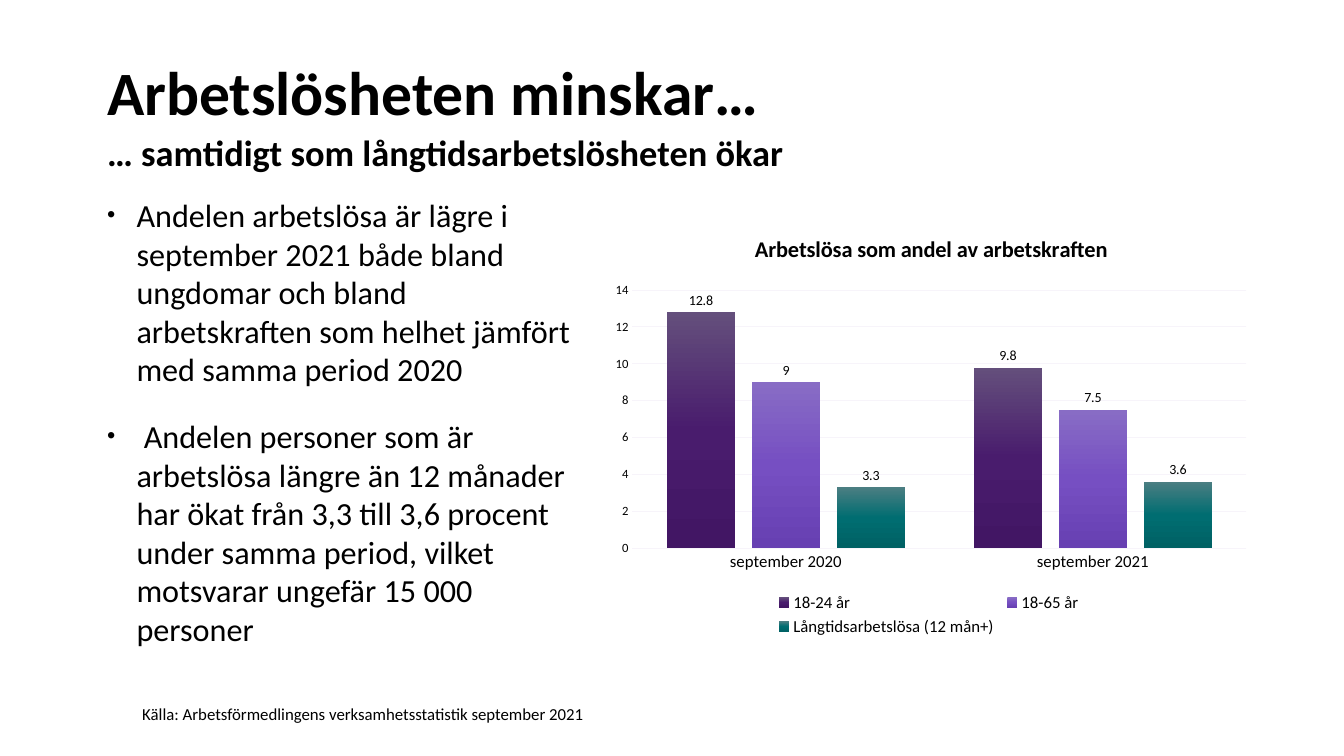
from lxml import etree
from pptx import Presentation
from pptx import util as u
from pptx.chart.data import CategoryChartData
from pptx.dml.color import RGBColor
from pptx.enum import chart as ch, text
from pptx.oxml.ns import qn

# Content
TITLE = "Arbetslösheten minskar…"
SUBTITLE = "… samtidigt som långtidsarbetslösheten ökar"
POINTS = [
    "Andelen arbetslösa är lägre i september 2021 både bland ungdomar och bland "
    "arbetskraften som helhet jämfört med samma period 2020",
    " Andelen personer som är arbetslösa längre än 12 månader har ökat från 3,3 "
    "till 3,6 procent under samma period, vilket motsvarar ungefär 15 000 personer",
]
SOURCE = "Källa: Arbetsförmedlingens verksamhetsstatistik september 2021"
CHART_TITLE = "Arbetslösa som andel av arbetskraften"
MONTHS = ["september 2020", "september 2021"]
# name, values, gradient from top to bottom, label format
SERIES = [
    ("18-24 år", (12.8, 9.8), ("644F7C", "491C6D", "421664"), "General"),
    ("18-65 år", (9, 7.5), ("886CC5", "764FC2", "6740B2"), "General"),
    ("Långtidsarbetslösa (12 mån+)", (3.3, 3.6), ("4B7E82", "006D71", "006164"), "0.0"),
]
FONT, BLACK, PALE = "Calibri", "000000", "F7F4FA"
LEFT = 76.5


def color(value):
    return RGBColor.from_string(value)


def style(font, size, bold=False):
    font.name, font.size, font.bold = FONT, u.Pt(size), bold
    font.color.rgb = color(BLACK)


def prepare(frame, inset=0):
    frame.word_wrap = True
    frame.auto_size = text.MSO_AUTO_SIZE.NONE
    frame.margin_left = frame.margin_right = u.Pt(inset)
    frame.margin_top = frame.margin_bottom = u.Pt(inset / 2)


def add_box(page, place, inset=0):
    box = page.shapes.add_textbox(*map(u.Pt, place))
    prepare(box.text_frame, inset)
    return box.text_frame


def write(para, words, size, bold=False):
    span = para.add_run()
    span.text = words
    style(span.font, size, bold)


def add_bullet(para, indent, percent):
    props = para._p.get_or_add_pPr()
    props.set("marL", str(u.Pt(indent)))
    props.set("indent", str(-u.Pt(indent)))
    etree.SubElement(props, qn("a:buSzPct"), val=str(percent * 1000))
    etree.SubElement(props, qn("a:buFont"), typeface="Arial")
    etree.SubElement(props, qn("a:buChar"), char="•")


def fill_gradient(series, stops):
    series.format.fill.gradient()
    series.format.fill.gradient_angle = 270
    stop_list = series._element.find(".//" + qn("a:gsLst"))
    stop_list.clear()
    for index, value in enumerate(stops):
        stop = etree.SubElement(stop_list, qn("a:gs"), pos=str(index * 50000))
        etree.SubElement(stop, qn("a:srgbClr"), val=value)


def set_layout(parent, after, **fractions):
    """Place a chart part by fractions of the chart area."""
    for old in parent.findall(qn("c:layout")):
        parent.remove(old)
    layout = etree.Element(qn("c:layout"))
    manual = etree.SubElement(layout, qn("c:manualLayout"))
    if after is None:
        etree.SubElement(manual, qn("c:layoutTarget"), val="inner")
        parent.insert(0, layout)
    else:
        parent.find(qn(after)).addnext(layout)
    for mode in ("xMode", "yMode"):
        etree.SubElement(manual, qn("c:" + mode), val="edge")
    for name, value in fractions.items():
        etree.SubElement(manual, qn("c:" + name), val=str(value))


def add_bar_chart(page, place):
    data = CategoryChartData()
    data.categories = MONTHS
    for name, values, _, _ in SERIES:
        data.add_series(name, values)
    chart = page.shapes.add_chart(
        ch.XL_CHART_TYPE.COLUMN_CLUSTERED, *map(u.Pt, place), data).chart
    style(chart.font, 10)

    # Title, legend and plot area
    chart.has_title = True
    write(chart.chart_title.text_frame.paragraphs[0], CHART_TITLE, 16, True)
    set_layout(chart.chart_title._element, "c:tx", x=0.24, y=0.05)
    chart.has_legend = True
    chart.legend.position = ch.XL_LEGEND_POSITION.BOTTOM
    chart.legend.include_in_layout = False
    style(chart.legend.font, 12)
    set_layout(chart.legend._element, "c:legendPos", x=0.27, y=0.88, w=0.46, h=0.12)
    set_layout(chart._chartSpace.chart.plotArea, None, x=0.067, y=0.19, w=0.897, h=0.597)

    # Axes
    months, share = chart.category_axis, chart.value_axis
    for axis, size in ((months, 12), (share, 9)):
        axis.major_tick_mark = axis.minor_tick_mark = ch.XL_TICK_MARK.NONE
        style(axis.tick_labels.font, size)
    share.minimum_scale, share.maximum_scale, share.major_unit = 0, 14, 2
    share.has_major_gridlines = True
    share.format.line.fill.background()
    for line in (months.format.line, share.major_gridlines.format.line):
        line.color.rgb, line.width = color(PALE), u.Pt(0.75)

    # Columns and their labels
    plot = chart.plots[0]
    plot.gap_width, plot.overlap, plot.vary_by_categories = 100, -24, False
    for series, (_, _, stops, number_format) in zip(plot.series, SERIES):
        series.invert_if_negative = False
        fill_gradient(series, stops)
        labels = series.data_labels
        labels.show_value = True
        labels.position = ch.XL_LABEL_POSITION.OUTSIDE_END
        labels.number_format, labels.number_format_is_linked = number_format, False
        style(labels.font, 10)


def main():
    deck = Presentation()
    deck.slide_width, deck.slide_height = u.Pt(960), u.Pt(540)
    page = deck.slides.add_slide(deck.slide_layouts[5])

    # Heading
    title = page.shapes.title
    title.left, title.top, title.width, title.height = map(u.Pt, (LEFT, 6.5, 756, 85.5))
    prepare(title.text_frame)
    title.text_frame.vertical_anchor = text.MSO_ANCHOR.BOTTOM
    para = title.text_frame.paragraphs[0]
    para.alignment, para.line_spacing = text.PP_ALIGN.LEFT, 0.9
    write(para, TITLE, 44, True)
    subtitle = add_box(page, (LEFT, 93, 677, 37.5))
    write(subtitle.paragraphs[0], SUBTITLE, 26, True)

    # Bullet points
    body = add_box(page, (LEFT, 139.5, 342, 307.5))
    for index, point in enumerate(POINTS):
        para = body.add_paragraph() if index else body.paragraphs[0]
        add_bullet(para, 21, 73)
        para.space_before, para.space_after = u.Pt(14 if index else 0), u.Pt(6)
        write(para, point, 23)

    # Source line and chart
    source = add_box(page, (94.5, 499, 531, 41), inset=7.2)
    write(source.paragraphs[0], SOURCE, 12)
    add_bar_chart(page, (419, 148.5, 489, 309))
    deck.save("out.pptx")


if __name__ == "__main__":
    main()
